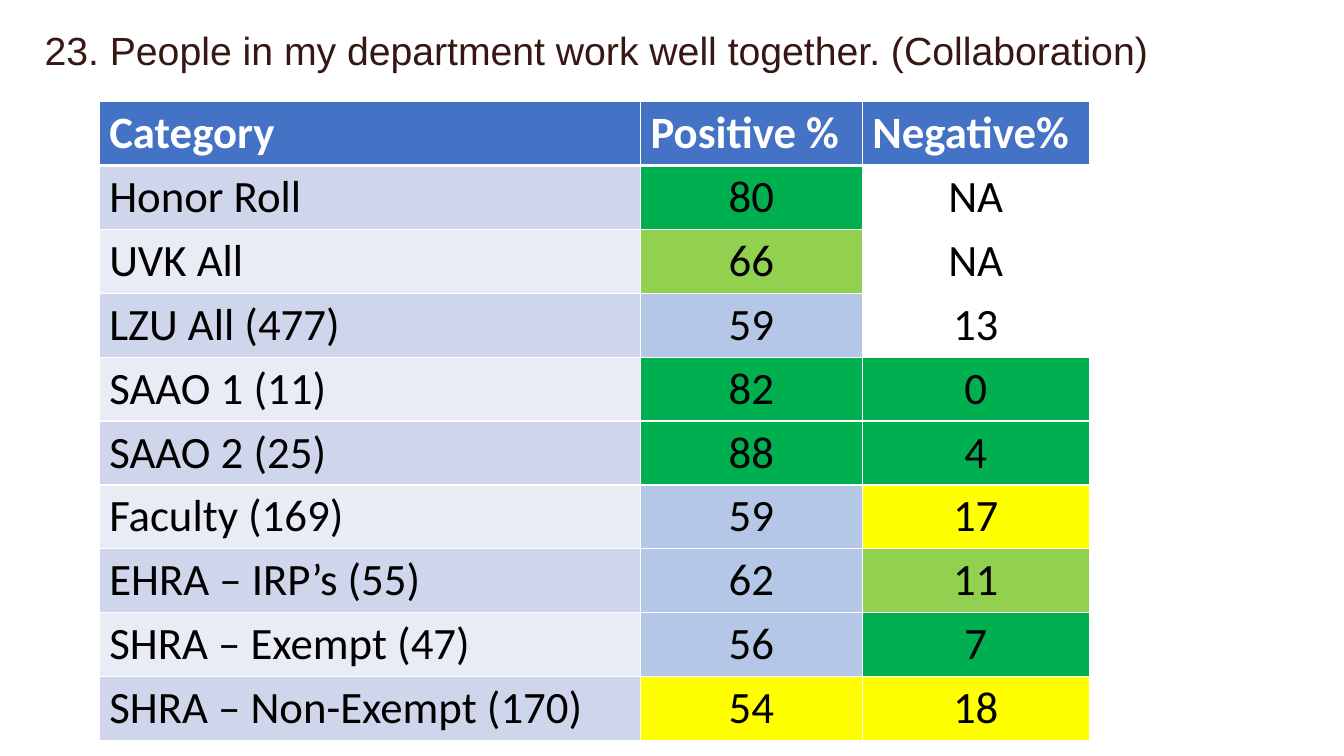
from lxml.etree import SubElement
from pptx import Presentation
from pptx.dml.color import RGBColor
from pptx.enum.text import MSO_ANCHOR as Anchor, MSO_AUTO_SIZE as Fit, PP_ALIGN as Align
from pptx.oxml.ns import qn
from pptx.util import Cm, Pt

TITLE = "23. People in my department work well together. (Collaboration)"
HEADS = ["Category", "Positive %", "Negative%"]
GREEN, LIME, BLUE, YELLOW = "00B050", "92D050", "B4C7E7", "FFFF00"
HEAD, BANDS = "4472C4", ["CFD5EA", "E9EBF5"]
WHITE, BLACK, BROWN = "FFFFFF", "000000", "371713"

# category, positive, its fill, negative, its fill
ROWS = [
    ("Honor Roll", "80", GREEN, "NA", None),
    ("UVK All", "66", LIME, "NA", None),
    ("LZU All (477)", "59", BLUE, "13", None),
    ("SAAO 1 (11)", "82", GREEN, "0", GREEN),
    ("SAAO 2 (25)", "88", GREEN, "4", GREEN),
    ("Faculty (169)", "59", BLUE, "17", YELLOW),
    ("EHRA – IRP’s (55)", "62", BLUE, "11", LIME),
    ("SHRA – Exempt (47)", "56", BLUE, "7", GREEN),
    ("SHRA – Non-Exempt (170)", "54", YELLOW, "18", YELLOW),
]
WIDTHS = [13.64, 5.59, 5.72]
ROW_H = 1.61


def rgb(code):
    return RGBColor.from_string(code)


def write(para, text, font, size, color, bold=False):
    run = para.add_run()
    run.text = text
    run.font.name = font
    run.font.size = Pt(size)
    run.font.bold = bold
    run.font.color.rgb = rgb(color)


def border(cell, bottom):
    """Draw white cell edges, 1 pt except for the given bottom width."""
    props = cell._tc.get_or_add_tcPr()
    edges = [("lnL", 1), ("lnR", 1), ("lnT", 1), ("lnB", bottom)]
    for spot, (tag, width) in enumerate(edges):
        line = SubElement(props, qn(f"a:{tag}"), w=str(Pt(width)))
        fill = SubElement(line, qn("a:solidFill"))
        SubElement(fill, qn("a:srgbClr"), val=WHITE)
        props.insert(spot, line)


def set_cell(cell, text, fill, head, center):
    if fill:
        cell.fill.solid()
        cell.fill.fore_color.rgb = rgb(fill)
    else:
        cell.fill.background()
    cell.margin_top = cell.margin_bottom = Cm(0.11)
    para = cell.text_frame.paragraphs[0]
    para.alignment = Align.CENTER if center else Align.LEFT
    write(para, text, "Calibri", 32, WHITE if head else BLACK, head)
    border(cell, 3 if head else 1)


def add_title(slide):
    title = slide.shapes.title
    title.left, title.top = Cm(0.87), Cm(0.53)
    title.width, title.height = Cm(30.99), Cm(1.45)
    frame = title.text_frame
    frame.auto_size = Fit.NONE
    frame.word_wrap = True
    frame.vertical_anchor = Anchor.TOP
    para = frame.paragraphs[0]
    para.alignment = Align.LEFT
    write(para, TITLE, "Arial", 28, BROWN)


def add_scores(slide):
    count = len(ROWS) + 1
    table = slide.shapes.add_table(
        count, len(HEADS), Cm(2.5), Cm(2.56), Cm(sum(WIDTHS)), Cm(ROW_H * count)
    ).table
    for col, width in zip(table.columns, WIDTHS):
        col.width = Cm(width)
    for row in table.rows:
        row.height = Cm(ROW_H)
    for c, text in enumerate(HEADS):
        set_cell(table.cell(0, c), text, HEAD, True, False)
    for r, (name, good, good_fill, bad, bad_fill) in enumerate(ROWS, 1):
        band = BANDS[(r - 1) % 2]
        cells = [(name, band), (good, good_fill), (bad, bad_fill)]
        for c, (text, fill) in enumerate(cells):
            set_cell(table.cell(r, c), text, fill, False, c > 0)


def main():
    deck = Presentation()
    deck.slide_width, deck.slide_height = Cm(33.87), Cm(19.05)
    slide = deck.slides.add_slide(deck.slide_layouts[5])
    add_scores(slide)
    add_title(slide)
    deck.save("out.pptx")


if __name__ == "__main__":
    main()
